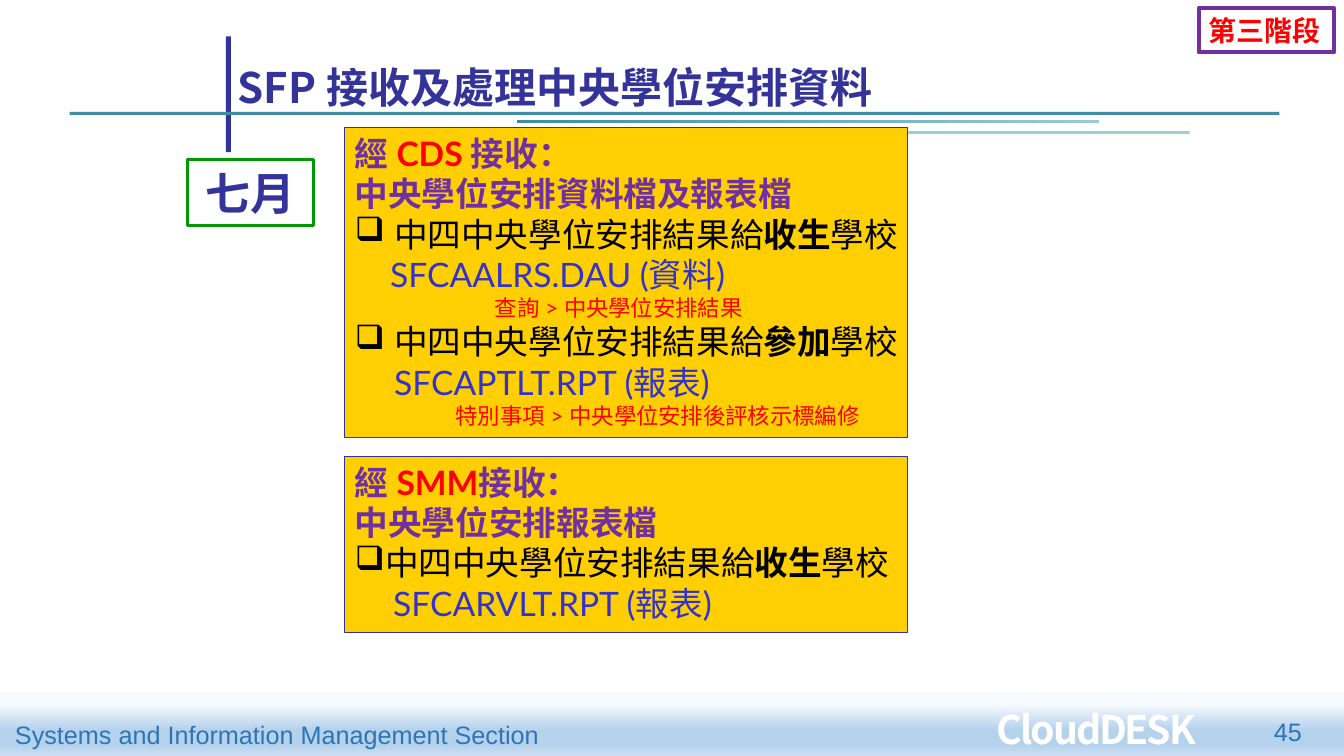
"""Build the July slide on receiving central school place allocation data."""
import pptx
import pptx.dml.color
import pptx.enum.shapes
import pptx.enum.text
import pptx.oxml
import pptx.oxml.ns
import pptx.util
from lxml import etree

Inches = pptx.util.Inches
ALIGN = pptx.enum.text.PP_ALIGN
ANCHOR = pptx.enum.text.MSO_ANCHOR

THEME = {
    "navy": "333399", "blue": "3333CC", "purple": "7030A0", "red": "FF0000",
    "black": "000000", "white": "FFFFFF", "green": "009900", "gold": "FFCF01",
    "footer": "2E75B6", "teal": "3F8DA5", "mist": "9BCAD9", "pale": "A1CDDB",
    "sans": "Arial", "body": "Lato", "cjk": "Noto Sans CJK SC",
    "title": 30, "month": 32, "brand": 28, "text": 24, "stage": 20, "foot": 18, "path": 16,
}

FOOTER_STOPS = [(18, "F7FAFD"), (58, "B5D2EC"), (81, "B5D2EC"), (100, "CEE1F2")]
RULE_STOPS = [(0, THEME["teal"]), (100, THEME["mist"])]

RULES = [
    ((0, 6.87, 13.33, 0.64), FOOTER_STOPS, 90),
    ((2.24, 0.36, 0.05, 1.15), "navy", 0),
    ((0.69, 1.11, 12, 0.03), "teal", 0),
    ((5.13, 1.19, 5.77, 0.03), RULE_STOPS, 0),
    ((8.13, 1.3, 3.67, 0.03), "pale", 0),
]


def heading(channel, ending):
    return {"runs": [("經 ", "purple", True), (channel, "red", True), (ending, "purple", True)]}


def subject(text):
    return {"runs": [(text, "purple", True)]}


def result_for(schools, indent):
    return {"bullet": "❑", "indent": indent,
            "runs": [("中四中央學位安排結果給", "black", False), (schools, "black", True),
                     ("學校", "black", False)]}


def file_name(text, indent):
    return {"indent": indent, "runs": [(text, "blue", False)]}


def menu_path(text, indent):
    return {"indent": indent, "size": "path", "runs": [(text, "red", False)]}


CDS_LINES = [
    heading("CDS ", "接收："),
    subject("中央學位安排資料檔及報表檔"),
    result_for("收生", 0.39),
    file_name("SFCAALRS.DAU (資料)", 0.35),
    menu_path("查詢 > 中央學位安排結果", 1.39),
    result_for("參加", 0.39),
    file_name("SFCAPTLT.RPT (報表)", 0.39),
    menu_path("特別事項 > 中央學位安排後評核示標編修", 1),
]
SMM_LINES = [
    heading("SMM", "接收："),
    subject("中央學位安排報表檔"),
    result_for("收生", 0.3),
    file_name("SFCARVLT.RPT (報表)", 0.38),
]


def plain(text, color, bold=True):
    return [{"runs": [(text, color, bold)]}]


LABELS = [
    (plain("Systems and Information Management Section", "footer", False),
     dict(at=(0.05, 7.09, 5.45, 0.4), size="foot", font="sans")),
    (plain("CloudDESK", "white"),
     dict(at=(9.79, 6.95, 2.73, 0.57), size="brand", spacing=-1.5)),
    (plain("SFP 接收及處理中央學位安排資料", "navy"),
     dict(at=(2.26, 0.33, 10.44, 0.83), size="title", anchor=ANCHOR.BOTTOM)),
    (CDS_LINES,
     dict(at=(3.42, 1.27, 5.58, 3.07), size="text", font="body", fill="gold",
          line=("navy", 0.75))),
    (plain("七月", "navy"),
     dict(at=(1.86, 1.58, 1.25, 0.66), size="month", line=("green", 2.25),
          align=ALIGN.CENTER, anchor=ANCHOR.MIDDLE, right=0.1)),
    (SMM_LINES,
     dict(at=(3.42, 4.53, 5.58, 1.75), size="text", font="body", fill="gold",
          line=("navy", 0.75))),
    (plain("第三階段", "red"),
     dict(at=(11.89, 0.08, 1.34, 0.44), size="stage", line=("purple", 3),
          anchor=ANCHOR.MIDDLE)),
    (plain("45", "footer", False),
     dict(at=(11.7, 7.06, 1.31, 0.5), size="foot", font="sans", align=ALIGN.RIGHT, right=0.1)),
]


def rgb(key):
    return pptx.dml.color.RGBColor.from_string(THEME[key])


def child(parent, tag, **attributes):
    return etree.SubElement(parent, pptx.oxml.ns.qn(tag), attributes)


def add_rectangle(slide, at):
    rectangle = slide.shapes.add_shape(
        pptx.enum.shapes.MSO_SHAPE.RECTANGLE, *map(Inches, at))
    rectangle.shadow.inherit = False
    return rectangle


def set_gradient(shape, stops, angle):
    shape.fill.gradient()
    gradient = shape.fill._xPr.find(pptx.oxml.ns.qn("a:gradFill"))
    for old in list(gradient):
        gradient.remove(old)
    stop_list = child(gradient, "a:gsLst")
    for position, color in stops:
        stop = child(stop_list, "a:gs", pos=str(position * 1000))
        child(stop, "a:srgbClr", val=color)
    child(gradient, "a:lin", ang=str(angle * 60000), scaled="0")


def add_rule(slide, at, fill, angle):
    rule = add_rectangle(slide, at)
    rule.line.fill.background()
    if isinstance(fill, str):
        rule.fill.solid()
        rule.fill.fore_color.rgb = rgb(fill)
    else:
        set_gradient(rule, fill, angle)


def add_text(slide, lines, *, at, size, font="cjk", fill=None, line=None,
             align=ALIGN.LEFT, anchor=ANCHOR.TOP, right=0, spacing=0):
    if line:
        box = add_rectangle(slide, at)
        box.line.color.rgb = rgb(line[0])
        box.line.width = pptx.util.Pt(line[1])
    else:
        box = slide.shapes.add_textbox(*map(Inches, at))
    if fill:
        box.fill.solid()
        box.fill.fore_color.rgb = rgb(fill)
    else:
        box.fill.background()
    frame = box.text_frame
    frame.word_wrap = True
    frame.vertical_anchor = anchor
    frame.margin_left, frame.margin_right = Inches(0.1), Inches(right)
    frame.margin_top = frame.margin_bottom = Inches(0.05)
    for index, entry in enumerate(lines):
        paragraph = frame.paragraphs[0] if index == 0 else frame.add_paragraph()
        paragraph.alignment = align
        properties = paragraph._p.get_or_add_pPr()
        indent = Inches(entry.get("indent", 0))
        properties.set("marL", str(indent))
        if "bullet" in entry:
            properties.set("indent", str(-indent))
            child(properties, "a:buChar", char=entry["bullet"])
        for words, color, bold in entry["runs"]:
            run = paragraph.add_run()
            run.text = words
            run.font.size = pptx.util.Pt(THEME[entry.get("size", size)])
            run.font.bold = bold
            run.font.color.rgb = rgb(color)
            run.font.name = THEME[font]
            child(run._r.rPr, "a:ea", typeface=THEME[font])
            if spacing:
                run._r.rPr.set("spc", str(int(spacing * 100)))


def main():
    deck = pptx.Presentation()
    deck.slide_width, deck.slide_height = Inches(13.33), Inches(7.5)
    slide = deck.slides.add_slide(deck.slide_layouts[6])
    for at, fill, angle in RULES:
        add_rule(slide, at, fill, angle)
    for lines, style in LABELS:
        add_text(slide, lines, **style)
    deck.save("out.pptx")


if __name__ == "__main__":
    main()
